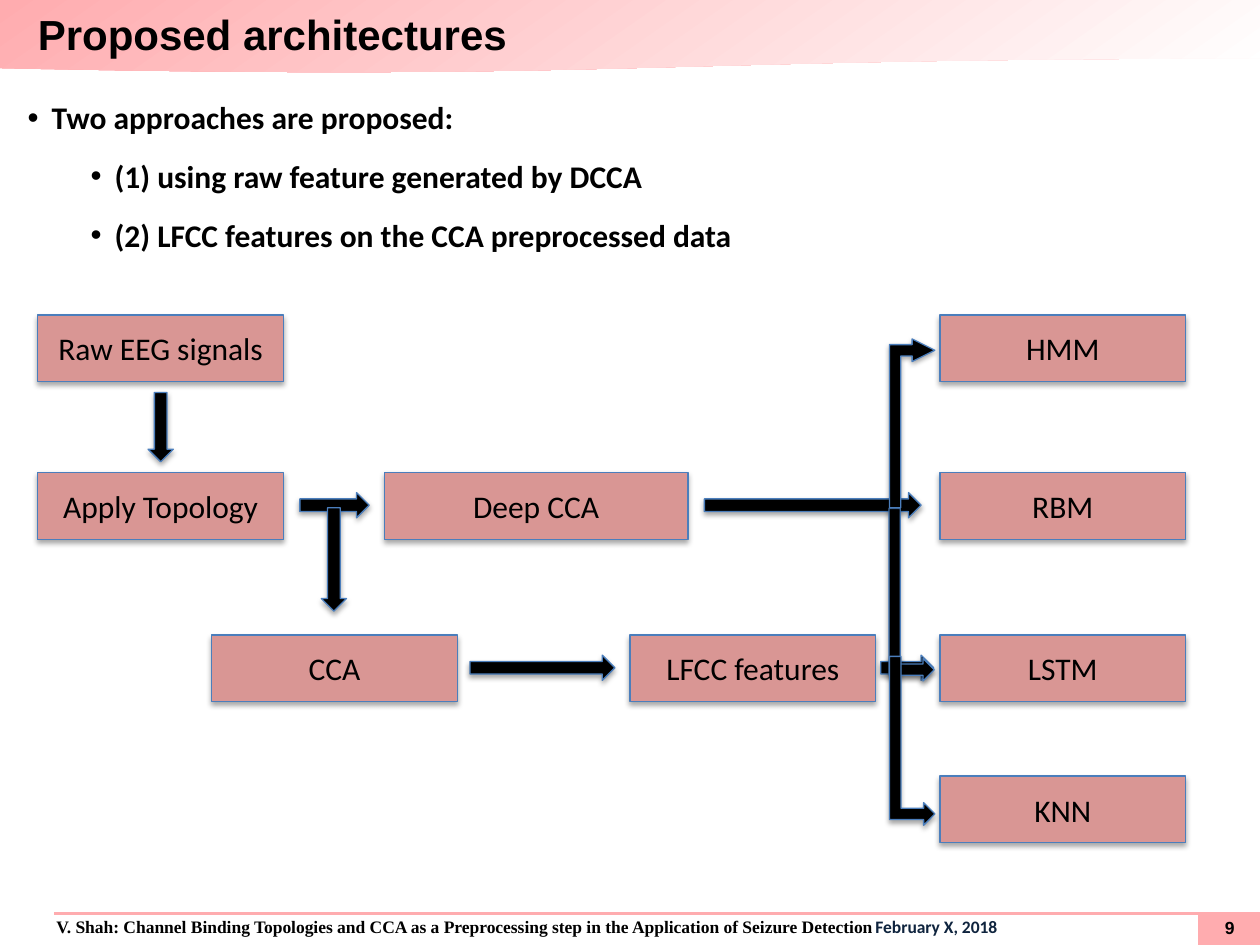
"""Builds the slide that presents the two proposed architectures."""
import pptx
import pptx.dml.color
import pptx.enum.shapes
import pptx.enum.text
import pptx.oxml.ns
import pptx.util
from lxml import etree

Inches = pptx.util.Inches
Pt = pptx.util.Pt
SHAPES = pptx.enum.shapes.MSO_SHAPE
ALIGN = pptx.enum.text.PP_ALIGN
MIDDLE = pptx.enum.text.MSO_ANCHOR.MIDDLE
qn = pptx.oxml.ns.qn

TITLE = "Proposed architectures"
FOOTER = ("V. Shah: Channel Binding Topologies and CCA as a Preprocessing step "
          "in the Application of Seizure Detection")
DATE = "February X, 2018"
PAGE = "9"
BULLETS = [
    (0, "Two approaches are proposed:"),
    (1, "(1) using raw feature generated by DCCA"),
    (1, "(2) LFCC features on the CCA preprocessed data"),
]

PINK, ROSE, BLUE, BLACK = "FFACAF", "D99694", "4B7EBC", "000000"
NAVY, WHITE = "0F243E", "FFFFFF"
BOX_WIDTH, BOX_HEIGHT = 1.95, 0.53
ROWS = [2.5, 3.75, 5.04, 6.16]
LEFT, RIGHT = 0.3, 7.46
BOXES = [
    ("Raw EEG signals", LEFT, 0, BOX_WIDTH),
    ("Apply Topology", LEFT, 1, BOX_WIDTH),
    ("Deep CCA", 3.05, 1, 2.41),
    ("CCA", 1.68, 2, BOX_WIDTH),
    ("LFCC features", 5, 2, BOX_WIDTH),
] + [(name, RIGHT, row, BOX_WIDTH)
     for row, name in enumerate(["HMM", "RBM", "LSTM", "KNN"])]
STRAIGHT_ARROWS = [
    (2.38, 3.91, 0.55, 0),
    (1, 3.29, 0.55, 90),
    (2.24, 4.34, 0.82, 90),
    (3.73, 5.2, 1.15, 0),
    (6.99, 5.2, 0.42, 0),
    (5.59, 3.91, 1.72, 0),
]
BENT_ARROWS = [
    (6.55, 4.54, 1.37, False),
    (6.57, 5.7, 1.34, False),
    (6.57, 3.18, 1.34, True),
]


def color(value):
    return pptx.dml.color.RGBColor.from_string(value)


def add_run(paragraph, text, size, font, fill=BLACK, bold=False):
    run = paragraph.add_run()
    run.text = text
    run.font.size = Pt(size)
    run.font.name = font
    run.font.bold = bold
    run.font.color.rgb = color(fill)


def add_shape(slide, kind, left, top, width, height, fill):
    shape = slide.shapes.add_shape(
        kind, Inches(left), Inches(top), Inches(width), Inches(height))
    shape.fill.solid()
    shape.fill.fore_color.rgb = color(fill)
    shape.line.fill.background()
    shape.shadow.inherit = False
    return shape


def add_diagram_shape(slide, kind, left, top, width, height, fill):
    shape = add_shape(slide, kind, left, top, width, height, fill)
    shape.line.color.rgb = color(BLUE)
    shape.line.width = Pt(0.75)
    effects = shape._element.spPr.find(qn("a:effectLst"))
    shadow = etree.SubElement(
        effects, qn("a:outerShdw"), blurRad=str(Pt(3.1)), dist=str(Pt(1.8)),
        dir="5400000", rotWithShape="0")
    shade = etree.SubElement(shadow, qn("a:srgbClr"), val=BLACK)
    etree.SubElement(shade, qn("a:alpha"), val="35000")
    return shape


def clear_insets(frame, left=0):
    frame.margin_left = Inches(left)
    frame.margin_top = frame.margin_right = frame.margin_bottom = 0


def add_text_box(slide, left, top, width, height):
    box = slide.shapes.add_textbox(
        Inches(left), Inches(top), Inches(width), Inches(height))
    box.text_frame.word_wrap = True
    return box.text_frame


def add_header(slide):
    band = add_shape(slide, SHAPES.FLOWCHART_DOCUMENT, 0, 0, 10.01, 0.58, PINK)
    band.fill.gradient()
    band.fill.gradient_angle = 305
    for stop, value in zip(band.fill.gradient_stops, (PINK, WHITE)):
        stop.color.rgb = color(value)

    title = slide.shapes.title
    title.left, title.top = 0, 0
    title.width, title.height = Inches(10), Inches(0.53)
    frame = title.text_frame
    clear_insets(frame, 0.3)
    frame.word_wrap = False
    frame.vertical_anchor = MIDDLE
    frame.paragraphs[0].alignment = ALIGN.LEFT
    add_run(frame.paragraphs[0], TITLE, 24, "Arial", bold=True)
    slide.shapes._spTree.append(title._element)


def add_footer(slide):
    add_shape(slide, SHAPES.RECTANGLE, 9.51, 7.24, 0.5, 0.26, PINK)
    paragraph = add_text_box(slide, 0.04, 7.23, 9.97, 0.26).paragraphs[0]
    paragraph.line_spacing = 0.95
    properties = paragraph._p.get_or_add_pPr()
    properties.set("marL", str(Inches(0.31)))
    properties.set("indent", "0")
    tabs = etree.SubElement(properties, qn("a:tabLst"))
    etree.SubElement(tabs, qn("a:tab"), pos=str(Inches(9.31)), algn="r")
    add_run(paragraph, FOOTER, 10, "Times New Roman", bold=True)
    add_run(paragraph, "\t" + DATE, 10, "Calibri", NAVY, True)

    rule = slide.shapes.add_connector(
        pptx.enum.shapes.MSO_CONNECTOR.STRAIGHT,
        Inches(0.43), Inches(7.25), Inches(10), Inches(7.25))
    rule.line.color.rgb = color(PINK)
    rule.line.width = Pt(1.5)
    etree.SubElement(rule._element.spPr, qn("a:effectLst"))

    frame = add_text_box(slide, 9.56, 7.28, 0.4, 0.17)
    clear_insets(frame)
    frame.vertical_anchor = MIDDLE
    frame.paragraphs[0].alignment = ALIGN.CENTER
    add_run(frame.paragraphs[0], PAGE, 10, "Arial", bold=True)


def add_diagram(slide):
    for name, left, row, width in BOXES:
        box = add_diagram_shape(slide, SHAPES.RECTANGLE, left, ROWS[row],
                                width, BOX_HEIGHT, ROSE)
        box.text_frame.vertical_anchor = MIDDLE
        paragraph = box.text_frame.paragraphs[0]
        paragraph.alignment = ALIGN.CENTER
        add_run(paragraph, name, 18, "Calibri")
    for left, top, length, rotation in STRAIGHT_ARROWS:
        arrow = add_diagram_shape(slide, SHAPES.RIGHT_ARROW, left, top,
                                  length, 0.2, BLACK)
        arrow.rotation = rotation
    for left, top, length, upward in BENT_ARROWS:
        arrow = add_diagram_shape(slide, SHAPES.BENT_UP_ARROW, left, top,
                                  length, 0.36, BLACK)
        arrow.rotation = 90
        if upward:
            arrow._element.spPr.find(qn("a:xfrm")).set("flipH", "1")
            arrow.adjustments[2] = 0.5


def add_bullets(slide):
    frame = add_text_box(slide, 0.22, 0.78, 9.53, 1.4)
    clear_insets(frame)
    for index, (level, text) in enumerate(BULLETS):
        paragraph = frame.add_paragraph() if index else frame.paragraphs[0]
        paragraph.level = level
        paragraph.space_after = Pt(12)
        properties = paragraph._p.get_or_add_pPr()
        properties.set("marL", str(Inches(0.19 + 0.5 * level)))
        properties.set("indent", str(Inches(-0.19)))
        etree.SubElement(properties, qn("a:buFont"), typeface="Arial")
        etree.SubElement(properties, qn("a:buChar"), char="•")
        add_run(paragraph, text, 18, "Calibri", bold=True)


def main():
    presentation = pptx.Presentation()
    presentation.slide_width = Inches(10)
    presentation.slide_height = Inches(7.5)
    slide = presentation.slides.add_slide(presentation.slide_layouts[5])
    add_header(slide)
    add_footer(slide)
    add_diagram(slide)
    add_bullets(slide)
    presentation.save("out.pptx")


if __name__ == "__main__":
    main()
